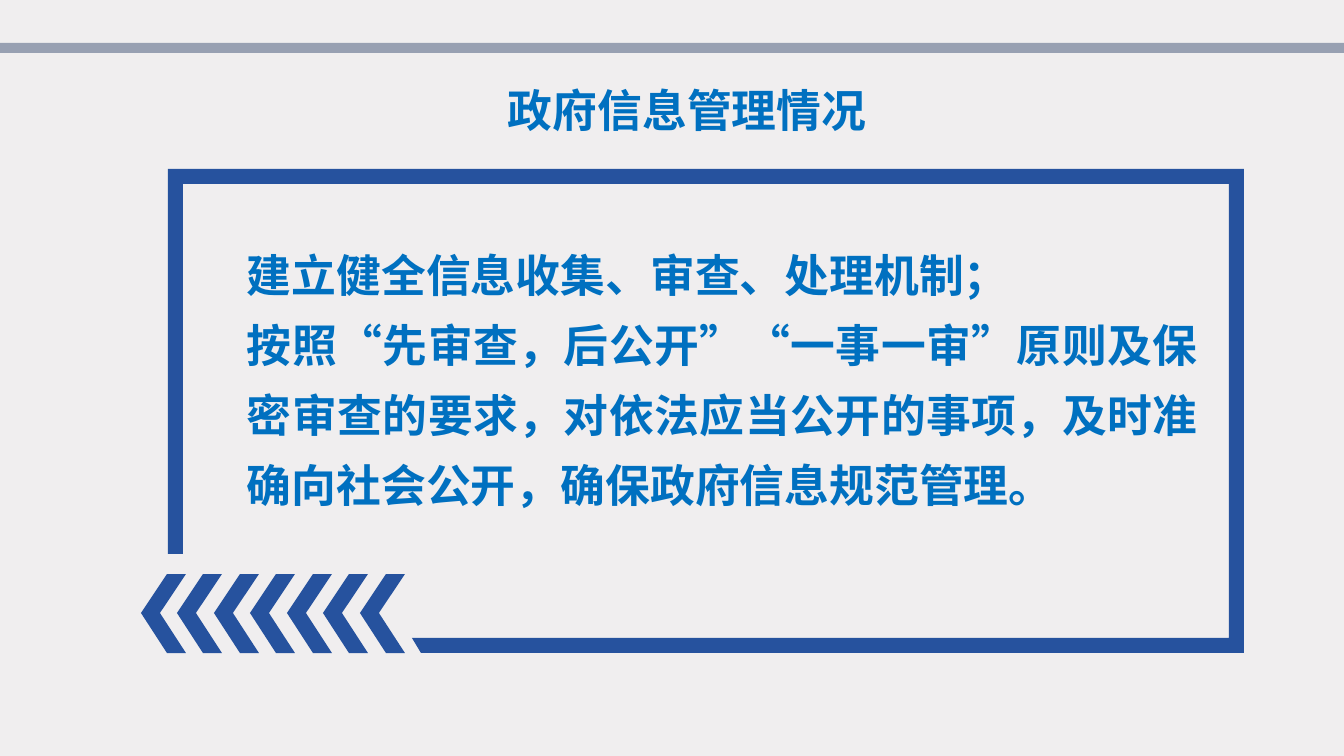
from pptx import Presentation
from pptx import util as u
from pptx.dml.color import RGBColor
from pptx.enum import shapes, text
from pptx.oxml.ns import qn

# Content
TITLE = ["政府信息管理情况"]
BODY = [
    "建立健全信息收集、审查、处理机制；",
    "按照“先审查，后公开”“一事一审”原则及保密审查的要求，"
    "对依法应当公开的事项，及时准确向社会公开，确保政府信息规范管理。",
]

# Theme and layout, in px
THEME = dict(back="F0EEEF", navy="26529E", blue="0070C0", gray="98A0B2",
             face="Noto Sans CJK SC", size=32)
PX = 914400 / 100.8
WIDE, HIGH = 1344, 756
BAR = (0, 43, WIDE, 10)
HEAD = (498, 78, 560, 64)
NOTE = (237, 227, 971, 330)
FRAME = [(1244, 653), (421, 653), (412, 638), (1229, 638), (1229, 184),
         (183, 184), (183, 554), (168, 554), (168, 169), (1244, 169)]
ARROW = [(45, 79), (26, 79), (0, 39), (26, 0), (45, 0), (19, 39)]
COUNT, FIRST, LAST, TOP = 7, 141, 360, 574


def emu(px):
    return round(px * PX)


def color(name):
    return RGBColor.from_string(THEME[name])


def paint(shape, name):
    shape.shadow.inherit = False
    shape.fill.solid()
    shape.fill.fore_color.rgb = color(name)
    shape.line.fill.background()


def outline(slide, points):
    form = slide.shapes.build_freeform(*points[0], scale=PX)
    form.add_line_segments(points[1:], close=True)
    paint(form.convert_to_shape(), "navy")


def write(slide, box, lines, **style):
    frame = slide.shapes.add_textbox(*map(emu, box)).text_frame
    frame.word_wrap = True
    for i, line in enumerate(lines):
        para = frame.paragraphs[0] if i == 0 else frame.add_paragraph()
        for key, value in style.items():
            setattr(para, key, value)
        run = para.add_run()
        run.text = line
        font = dict(name=THEME["face"], size=u.Pt(THEME["size"]), bold=True)
        for key, value in font.items():
            setattr(run.font, key, value)
        run.font.color.rgb = color("blue")
        # East Asian glyphs take their own typeface entry
        props = run.font._element
        props.set("lang", "zh-CN")
        east = props.makeelement(qn("a:ea"), {"typeface": THEME["face"]})
        props.find(qn("a:latin")).addnext(east)


def main():
    deck = Presentation()
    deck.slide_width, deck.slide_height = emu(WIDE), emu(HIGH)
    slide = deck.slides.add_slide(deck.slide_layouts[6])
    fill = slide.background.fill
    fill.solid()
    fill.fore_color.rgb = color("back")

    # Open frame and its row of chevrons
    outline(slide, FRAME)
    for i in range(COUNT):
        left = FIRST + i * (LAST - FIRST) // (COUNT - 1)
        outline(slide, [(left + x, TOP + y) for x, y in ARROW])

    # Text
    write(slide, NOTE, BODY, line_spacing=1.3,
          alignment=text.PP_ALIGN.JUSTIFY)
    write(slide, HEAD, TITLE)

    # Top bar
    bar = slide.shapes.add_shape(shapes.MSO_SHAPE.RECTANGLE, *map(emu, BAR))
    paint(bar, "gray")
    deck.save("out.pptx")


if __name__ == "__main__":
    main()
